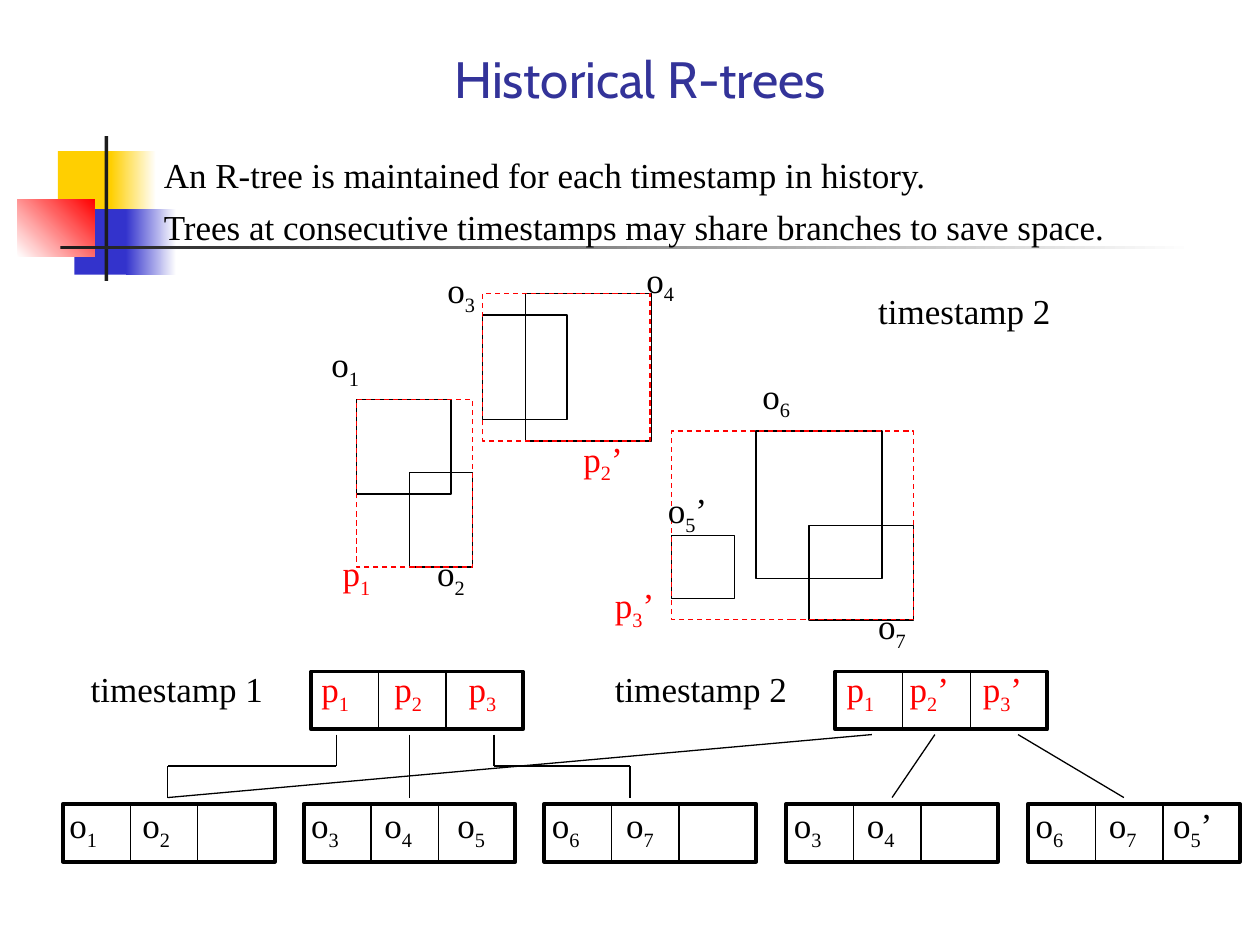
import itertools

import pptx
import pptx.dml.color
import pptx.enum.dml
import pptx.enum.shapes
import pptx.enum.text
import pptx.oxml
import pptx.oxml.ns
import pptx.util
from pptx.util import Inches

BLACK, RED, WHITE = "000000", "FF0000", "FFFFFF"
YELLOW, BLUE, DARK, TITLE_BLUE = "FFCF01", "3333CC", "1C1C1C", "333399"
SERIF = "Times New Roman"
NODE_W, NODE_H, CELL_W = 1.68, 0.46, 0.535
ROOT_Y, LEAF_Y = 5.33, 6.38
LINK_TOP, LINK_MID, LINK_END = 5.83, 6.08, 6.33


def rgb(value):
    return pptx.dml.color.RGBColor.from_string(value)


def write(tf, text, size=20, font=SERIF, color=BLACK, align=None, before=12):
    """Fill a text frame; the character after "_" becomes a subscript."""
    tf.word_wrap = True
    for side in ("left", "top", "right", "bottom"):
        setattr(tf, f"margin_{side}", Inches(0.05))
    p = tf.paragraphs[0]
    p.alignment = align
    p.space_before = pptx.util.Pt(before)
    base, _, rest = text.partition("_")
    for part, is_sub in ((base, False), (rest[:1], True), (rest[1:], False)):
        if not part:
            continue
        r = p.add_run()
        r.text = part
        r.font.size = pptx.util.Pt(size)
        r.font.name = font
        r.font.color.rgb = rgb(color)
        if is_sub:
            r.font._element.set("baseline", "-25000")


def add_text(s, text, x, y, w=1.08, **fmt):
    h = 0.46 if "_" in text else 0.41
    sp = s.shapes.add_textbox(Inches(x), Inches(y), Inches(w), Inches(h))
    write(sp.text_frame, text, **fmt)


def add_rect(s, x, y, w, h):
    sp = s.shapes.add_shape(pptx.enum.shapes.MSO_SHAPE.RECTANGLE,
                            Inches(x), Inches(y), Inches(w), Inches(h))
    sp.shadow.inherit = False
    return sp


def add_block(s, x, y, w, h, *colors, angle=0):
    """Borderless rectangle: one colour is solid, two make a gradient."""
    sp = add_rect(s, x, y, w, h)
    sp.line.fill.background()
    if len(colors) == 1:
        sp.fill.solid()
        sp.fill.fore_color.rgb = rgb(colors[0])
        return
    sp.fill.gradient()
    sp.fill.gradient_angle = angle
    for stop, color in zip(sp.fill.gradient_stops, colors):
        stop.color.rgb = rgb(color)


def add_outline(s, x, y, w, h, color=BLACK, width=0.75, dashed=False):
    sp = add_rect(s, x, y, w, h)
    sp.fill.background()
    sp.line.color.rgb = rgb(color)
    sp.line.width = pptx.util.Pt(width)
    if dashed:
        sp.line.dash_style = pptx.enum.dml.MSO_LINE.DASH


def add_path(s, *points):
    """Join successive points with straight lines."""
    for (x1, y1), (x2, y2) in itertools.pairwise(points):
        line = s.shapes.add_connector(
            pptx.enum.shapes.MSO_CONNECTOR.STRAIGHT,
            Inches(x1), Inches(y1), Inches(x2), Inches(y2))
        line.line.color.rgb = rgb(BLACK)
        line.line.width = pptx.util.Pt(0.75)
        sp_pr = line._element.spPr
        sp_pr.append(pptx.oxml.parse_xml(
            f"<a:effectLst {pptx.oxml.ns.nsdecls('a')}/>"))


def add_node(s, x, y, entries, label_y, color=BLACK):
    """Three-cell tree node; entries pairs each label with its left edge."""
    add_outline(s, x, y, NODE_W, NODE_H, width=2.25)
    for i in (1, 2):
        divider = x + i * CELL_W
        add_path(s, (divider, y), (divider, y + NODE_H))
    for text, left in entries:
        add_text(s, text, left, label_y, w=0.99, color=color)


def add_decoration(s):
    add_block(s, 0.46, 1.2, 0.48, 0.52, YELLOW)
    add_block(s, 0.88, 1.2, 0.36, 0.52, YELLOW, WHITE)
    add_block(s, 0.59, 1.66, 0.46, 0.52, BLUE)
    add_block(s, 1, 1.66, 0.4, 0.52, BLUE, WHITE)
    add_block(s, 0.14, 1.58, 0.61, 0.46, WHITE, RED, angle=45)
    add_block(s, 0.83, 1.08, 0.03, 1.15, DARK)
    add_block(s, 0.48, 1.95, 9, 0.03, DARK, WHITE)


def add_title(s, text):
    sp = s.shapes.title
    sp.left, sp.top = Inches(0.83), Inches(0.33)
    sp.width, sp.height = Inches(8.5), Inches(0.58)
    tf = sp.text_frame
    tf.auto_size = pptx.enum.text.MSO_AUTO_SIZE.NONE
    tf.vertical_anchor = pptx.enum.text.MSO_ANCHOR.MIDDLE
    write(tf, text, size=29.2, font="Cabin", color=TITLE_BLUE,
          align=pptx.enum.text.PP_ALIGN.CENTER, before=0)


def add_trees(s):
    roots = [
        (2.47, [("p_1", 2.5), ("p_2", 3.08), ("p_3", 3.67)]),
        (6.63, [("p_1", 6.67), ("p_2’", 7.17), ("p_3’", 7.75)]),
    ]
    leaves = [
        (0.5, [("o_1", 0.5), ("o_2", 1.08)]),
        (2.41, [("o_3", 2.42), ("o_4", 3), ("o_5", 3.58)]),
        (4.32, [("o_6", 4.33), ("o_7", 4.92)]),
        (6.24, [("o_3", 6.25), ("o_4", 6.83)]),
        (8.16, [("o_6", 8.17), ("o_7", 8.75), ("o_5’", 9.26)]),
    ]
    for x, entries in roots:
        add_node(s, x, ROOT_Y, entries, 5.25, color=RED)
    for x, entries in leaves:
        add_node(s, x, LEAF_Y, entries, 6.33)
    for start, end in ((3.25, 3.25), (7.42, 7.08), (6.92, 1.33), (8.08, 8.92)):
        add_path(s, (start, LINK_TOP), (end, LINK_END))
    for start, end in ((2.67, 1.33), (3.92, 5)):
        add_path(s, (start, LINK_TOP), (start, LINK_MID),
                 (end, LINK_MID), (end, LINK_END))
    add_text(s, "timestamp 1", 0.67, 5.25, w=2)
    add_text(s, "timestamp 2", 4.83, 5.25, w=2)


def add_regions(s):
    objects = [
        (2.83, 3.17, 0.75, 0.75), (3.25, 3.75, 0.5, 0.75),
        (3.83, 2.5, 0.67, 0.83), (4.17, 2.33, 1, 1.17),
        (5.33, 4.25, 0.5, 0.5), (6, 3.42, 1, 1.17),
        (6.42, 4.17, 0.83, 0.75),
    ]
    bounds = [(2.83, 3.17, 0.92, 1.33), (3.83, 2.33, 1.33, 1.17),
              (5.33, 3.42, 1.92, 1.5)]
    object_labels = [
        ("o_1", 2.58, 2.67), ("o_2", 3.42, 4.33), ("o_3", 3.5, 2.08),
        ("o_4", 5.08, 2), ("o_5’", 5.25, 3.83), ("o_6", 6, 2.92),
        ("o_7", 6.92, 4.75),
    ]
    bound_labels = [("p_1", 2.67, 4.33), ("p_2’", 4.58, 3.42),
                    ("p_3’", 4.83, 4.58)]
    for box in objects:
        add_outline(s, *box)
    for box in bounds:
        add_outline(s, *box, color=RED, dashed=True)
    for label in object_labels:
        add_text(s, *label)
    for label in bound_labels:
        add_text(s, *label, w=0.99, color=RED)
    add_text(s, "timestamp 2", 6.92, 2.25, w=2)


def main():
    prs = pptx.Presentation()
    prs.slide_width, prs.slide_height = Inches(10), Inches(7.5)
    s = prs.slides.add_slide(prs.slide_layouts[5])
    add_decoration(s)
    add_title(s, "Historical R-trees")
    add_text(s, "An R-tree is maintained for each timestamp in history.",
             1.25, 1.17, w=7.67)
    add_text(s, "Trees at consecutive timestamps may share branches to save space.",
             1.25, 1.58, w=8.25)
    add_trees(s)
    add_regions(s)
    prs.save("out.pptx")


if __name__ == "__main__":
    main()
